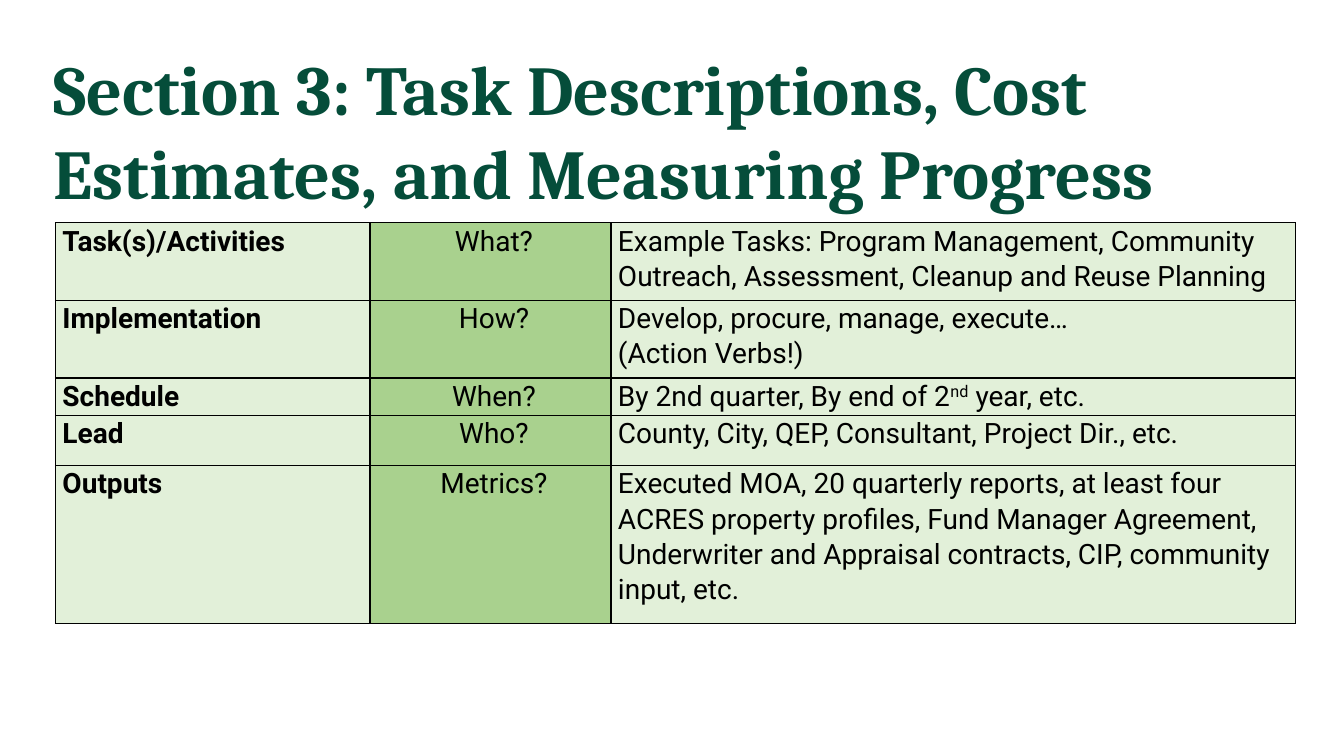
"""Build the slide on task descriptions, cost estimates and measuring progress."""
from dataclasses import dataclass

from lxml import etree
from pptx import Presentation
from pptx.dml.color import RGBColor
from pptx.enum.text import MSO_ANCHOR, MSO_AUTO_SIZE, PP_ALIGN
from pptx.oxml.ns import qn
from pptx.util import Inches, Pt

LEFT, CENTER = PP_ALIGN.LEFT, PP_ALIGN.CENTER
TOP = MSO_ANCHOR.TOP
GROW = MSO_AUTO_SIZE.SHAPE_TO_FIT_TEXT
TITLE_ONLY = 5


@dataclass(frozen=True)
class Theme:
    """Colours, fonts and sizes of the slide."""
    title_color: str = "054D3A"
    text_color: str = "000000"
    border_color: str = "000000"
    light_green: str = "E2F0D9"
    mid_green: str = "A9D18E"
    title_font: str = "Cambria"
    body_font: str = "Roboto"
    title_size: int = 50
    body_size: int = 20
    line_spacing: float = 1.07
    border_width: int = 1


class SlideBuilder:
    """Holds the theme and the current slide."""

    def __init__(self, page, theme):
        """Keep the page and its theme."""
        self.page = page
        self.theme = theme

    def add_span(self, para, text, font, size, color, bold=False, raised=False):
        """Add one formatted run."""
        span = para.add_run()
        span.text = text
        span.font.name = font
        span.font.size = Pt(size)
        span.font.bold = bold
        span.font.color.rgb = RGBColor.from_string(color)
        if raised:
            span.font._element.set("baseline", "30000")

    def add_title(self, text, left, top, width, height):
        """Place and format the title placeholder."""
        theme = self.theme
        box = self.page.shapes.title
        box.left, box.top = Inches(left), Inches(top)
        box.width, box.height = Inches(width), Inches(height)
        frame = box.text_frame
        frame.word_wrap = True
        frame.auto_size = GROW
        frame.vertical_anchor = TOP
        para = frame.paragraphs[0]
        para.alignment = LEFT
        self.add_span(para, text, theme.title_font, theme.title_size,
                      theme.title_color, bold=True)

    def add_borders(self, cell):
        """Draw a thin line on all four sides of a cell."""
        properties = cell._tc.get_or_add_tcPr()
        for index, side in enumerate(("a:lnL", "a:lnR", "a:lnT", "a:lnB")):
            line = etree.Element(qn(side), w=str(Pt(self.theme.border_width)))
            fill = etree.SubElement(line, qn("a:solidFill"))
            etree.SubElement(fill, qn("a:srgbClr"), val=self.theme.border_color)
            properties.insert(index, line)

    def fill_cell(self, cell, paragraphs, fill, align=LEFT, bold=False, inset=0.07):
        """Format a cell and write its paragraphs, each a list of runs."""
        theme = self.theme
        cell.margin_left, cell.margin_right = Inches(inset), Inches(0.07)
        cell.margin_top = cell.margin_bottom = 0
        cell.fill.solid()
        cell.fill.fore_color.rgb = RGBColor.from_string(fill)
        self.add_borders(cell)
        frame = cell.text_frame
        for index, spans in enumerate(paragraphs):
            para = frame.add_paragraph() if index else frame.paragraphs[0]
            para.alignment = align
            para.line_spacing = theme.line_spacing
            for text, raised in spans:
                self.add_span(para, text, theme.body_font, theme.body_size,
                              theme.text_color, bold, raised)

    def add_table(self, rows, left, top, widths, heights):
        """Add the table of topics, questions and examples."""
        theme = self.theme
        table = self.page.shapes.add_table(
            len(rows), len(widths), Inches(left), Inches(top),
            Inches(sum(widths)), Inches(sum(heights))).table
        table.first_row = table.horz_banding = False
        for column, width in zip(table.columns, widths):
            column.width = Inches(width)
        for row, height in zip(table.rows, heights):
            row.height = Inches(height)
        for index, (topic, question, examples) in enumerate(rows):
            self.fill_cell(table.cell(index, 0), [[(topic, False)]],
                           theme.light_green, bold=True)
            self.fill_cell(table.cell(index, 1), [[(question, False)]],
                           theme.mid_green, align=CENTER, inset=0.14)
            self.fill_cell(table.cell(index, 2), examples, theme.light_green)


TASK_ROWS = [
    ("Task(s)/Activities", "What?", [[(
        "Example Tasks: Program Management, Community Outreach, Assessment, "
        "Cleanup and Reuse Planning", False)]]),
    ("Implementation", "How?", [[("Develop, procure, manage, execute…", False)],
                                [("(Action Verbs!)", False)]]),
    ("Schedule", "When?", [[("By 2nd quarter, By end of 2", False), ("nd", True),
                            (" year, etc.", False)]]),
    ("Lead", "Who?", [[("County, City, QEP, Consultant, Project Dir., etc.", False)]]),
    ("Outputs", "Metrics?", [[(
        "Executed MOA, 20 quarterly reports, at least four ACRES property profiles, "
        "Fund Manager Agreement, Underwriter and Appraisal contracts, CIP, "
        "community input, etc.", False)]]),
]


def main():
    """Build and save the deck."""
    deck = Presentation()
    deck.slide_width, deck.slide_height = Inches(13.33), Inches(7.5)
    page = deck.slides.add_slide(deck.slide_layouts[TITLE_ONLY])
    builder = SlideBuilder(page, Theme())
    builder.add_title("Section 3: Task Descriptions, Cost Estimates, and Measuring Progress",
                      0.43, 0.4, 12.47, 1.78)
    builder.add_table(TASK_ROWS, 0.55, 2.21, (3.12, 2.39, 6.79),
                      (0.77, 0.77, 0.37, 0.5, 1.57))
    deck.save("out.pptx")


if __name__ == "__main__":
    main()
